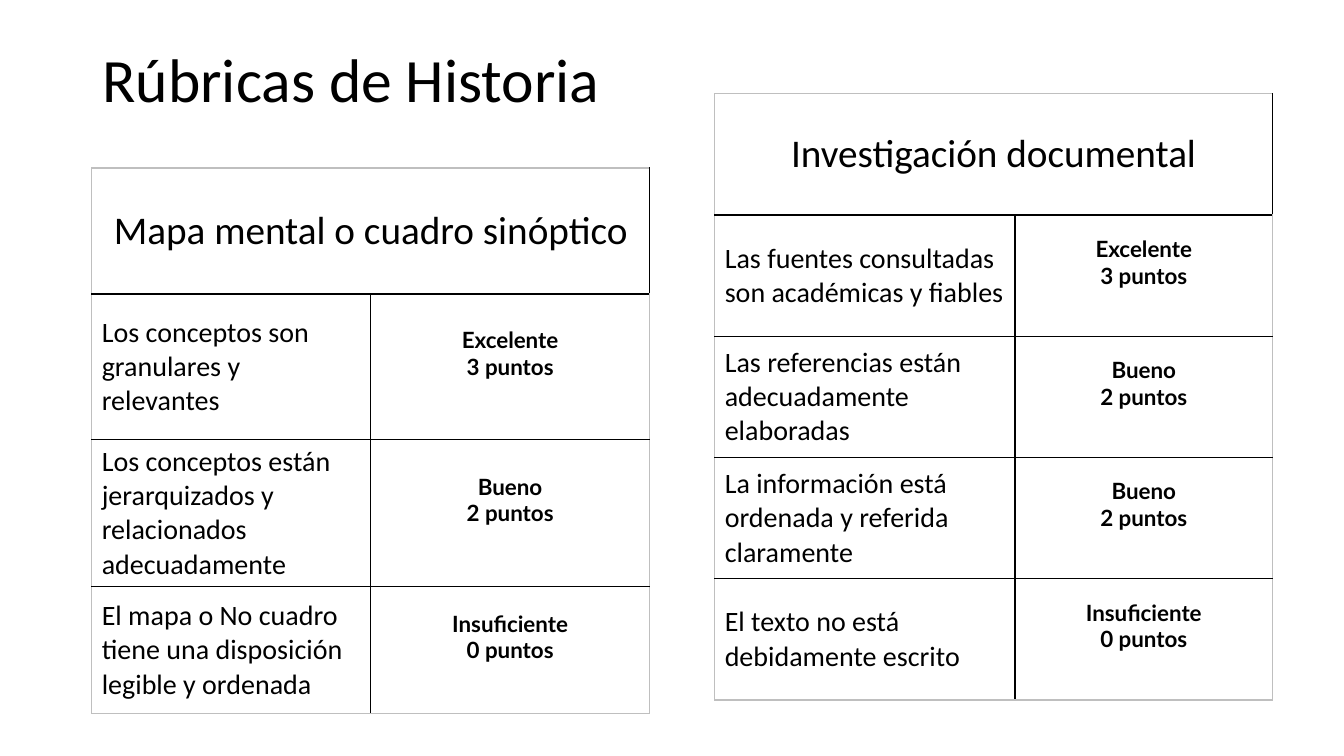
from lxml import etree
from pptx import Presentation
from pptx.dml.color import RGBColor
from pptx.enum.text import MSO_ANCHOR, PP_ALIGN, MSO_AUTO_SIZE
from pptx.oxml.ns import qn
from pptx.util import Pt

LEFT, CENTER = PP_ALIGN.LEFT, PP_ALIGN.CENTER
MIDDLE = MSO_ANCHOR.MIDDLE

# Content
TITLE = "Rúbricas de Historia"
EXCELLENT = ("Excelente", "3 puntos")
GOOD = ("Bueno", "2 puntos")
POOR = ("Insuficiente", "0 puntos")
RUBRICS = [
    {
        "heading": "Mapa mental o cuadro sinóptico",
        "origin": (65.5, 120),
        "columns": (199.25, 199.25),
        "rows": (90, 104, 105, 90.5),
        "criteria": [
            ("Los conceptos son granulares y relevantes", EXCELLENT),
            ("Los conceptos están jerarquizados y relacionados adecuadamente", GOOD),
            ("El mapa o No cuadro tiene una disposición legible y ordenada", POOR),
        ],
    },
    {
        "heading": "Investigación documental",
        "origin": (510.5, 67),
        "columns": (214.6, 183.9),
        "rows": (86.6,) * 5,
        "criteria": [
            ("Las fuentes consultadas son académicas y fiables", EXCELLENT),
            ("Las referencias están adecuadamente elaboradas", GOOD),
            ("La información está ordenada y referida claramente", GOOD),
            ("El texto no está debidamente escrito", POOR),
        ],
    },
]

# Theme
THEME = {
    "text": RGBColor(0, 0, 0),
    "inner": "000000",
    "outer": "BFBFBF",
    "border": 1,
    "title": {"name": "Calibri", "size": Pt(44), "bold": False},
    "heading": {"name": "Calibri", "size": Pt(28), "bold": False},
    "criterion": {"name": "Calibri", "size": Pt(20), "bold": False},
    "score": {"name": "Lato", "size": Pt(16), "bold": True},
}
SCORE_MARGIN = 22.8  # lifts the score half a line above the middle


def write(tf, lines, style, align):
    for i, line in enumerate(lines):
        p = tf.paragraphs[0] if i == 0 else tf.add_paragraph()
        p.alignment = align
        r = p.add_run()
        r.text = line
        for key, value in THEME[style].items():
            setattr(r.font, key, value)
        r.font.color.rgb = THEME["text"]


def set_borders(cell, outer_sides):
    tcPr = cell._tc.get_or_add_tcPr()
    for side in "LRTB":
        ln = etree.SubElement(tcPr, qn(f"a:ln{side}"), w=str(Pt(THEME["border"])))
        fill = etree.SubElement(ln, qn("a:solidFill"))
        color = THEME["outer" if side in outer_sides else "inner"]
        etree.SubElement(fill, qn("a:srgbClr"), val=color)


def add_rubric(s, rubric):
    columns, rows = rubric["columns"], rubric["rows"]
    x, y = rubric["origin"]
    frame = s.shapes.add_table(len(rows), len(columns), Pt(x), Pt(y),
                               Pt(sum(columns)), Pt(sum(rows)))
    table = frame.table
    table.first_row = table.horz_banding = False
    for column, width in zip(table.columns, columns):
        column.width = Pt(width)
    for row, height in zip(table.rows, rows):
        row.height = Pt(height)

    # Cell frames
    last = len(rows) - 1
    for i in range(len(rows)):
        for j in range(len(columns)):
            cell = table.cell(i, j)
            outer = ("L", "R")[j] + ("T" if i == 0 else "B" if i == last else "")
            set_borders(cell, outer)
            cell.fill.background()
            cell.vertical_anchor = MIDDLE

    # Heading, criteria and scores
    heading = table.cell(0, 0)
    heading.merge(table.cell(0, 1))
    write(heading.text_frame, [rubric["heading"]], "heading", CENTER)
    for i, (criterion, score) in enumerate(rubric["criteria"], 1):
        write(table.cell(i, 0).text_frame, [criterion], "criterion", LEFT)
        cell = table.cell(i, 1)
        cell.margin_bottom = Pt(SCORE_MARGIN)
        write(cell.text_frame, score, "score", CENTER)


def main():
    prs = Presentation()
    prs.slide_width, prs.slide_height = Pt(960), Pt(540)
    s = prs.slides.add_slide(prs.slide_layouts[5])

    # Title
    sp = s.shapes.title
    sp.left, sp.top, sp.width, sp.height = Pt(66), Pt(6.5), Pt(828), Pt(104.4)
    tf = sp.text_frame
    tf.auto_size = MSO_AUTO_SIZE.NONE
    tf.vertical_anchor = MIDDLE
    write(tf, [TITLE], "title", LEFT)
    tf.paragraphs[0].line_spacing = 0.9

    # Rubric tables
    for rubric in RUBRICS:
        add_rubric(s, rubric)

    prs.save("out.pptx")


if __name__ == "__main__":
    main()
